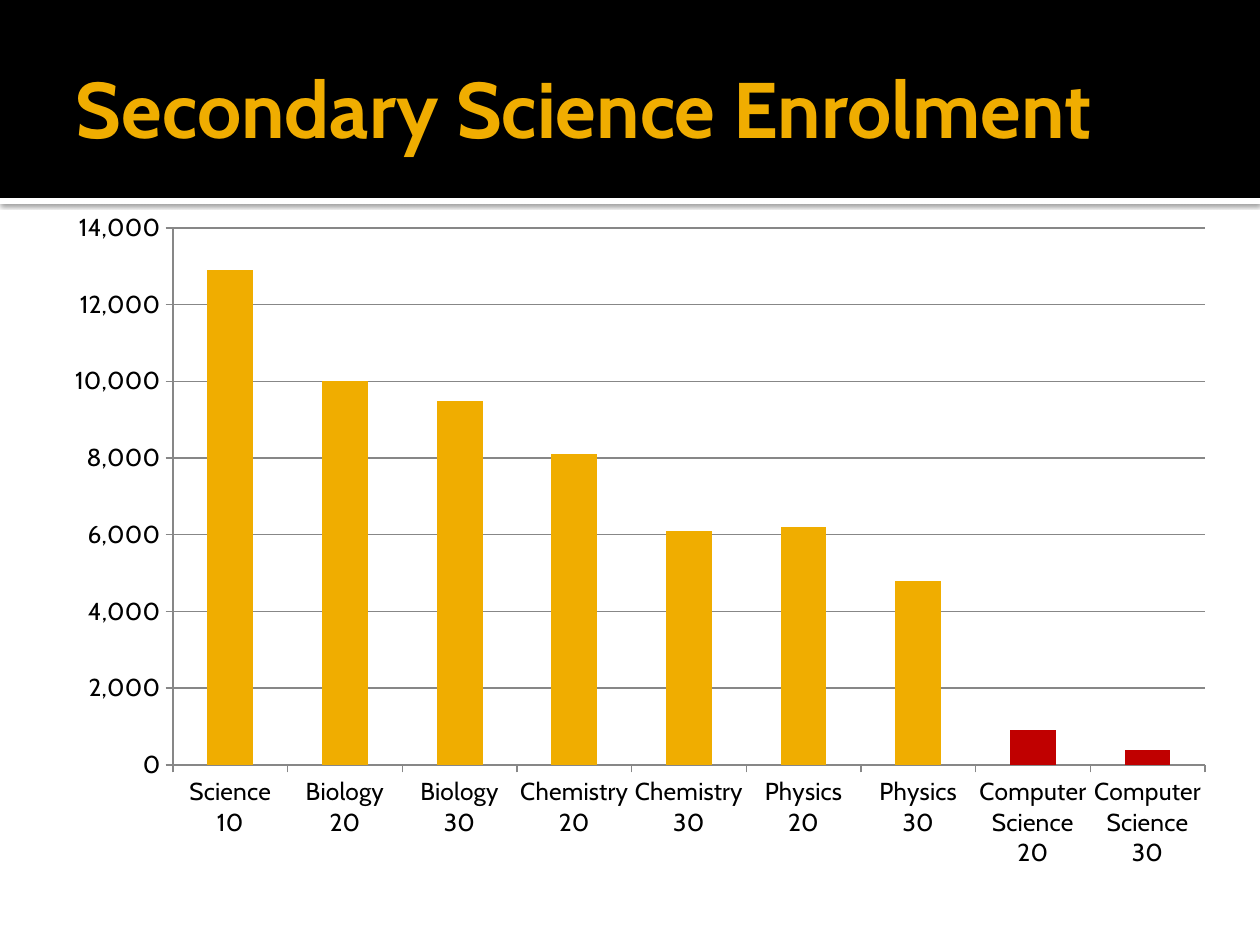
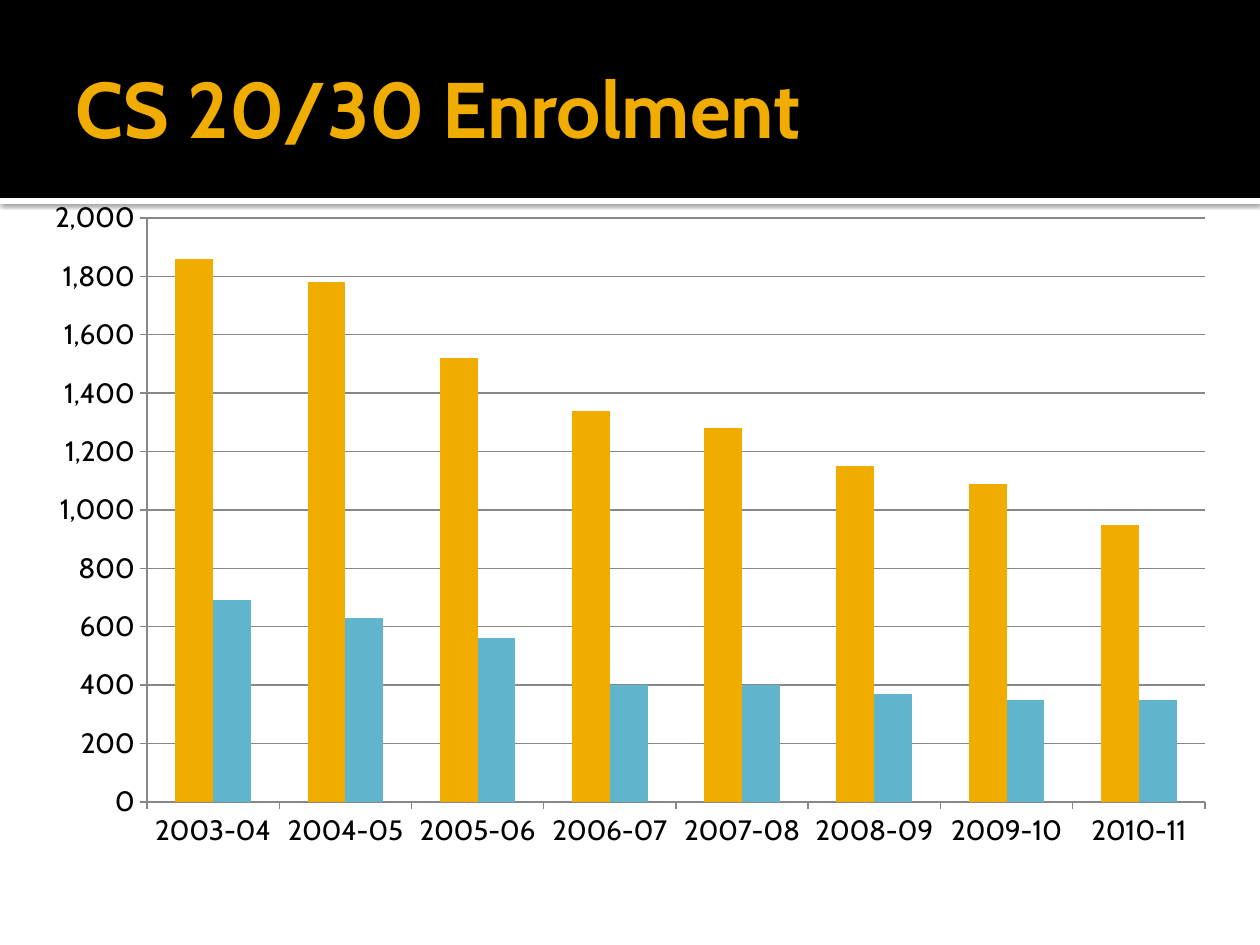
from lxml.etree import SubElement
from pptx import Presentation
from pptx.chart.data import CategoryChartData
from pptx.dml.color import RGBColor
from pptx.enum.chart import XL_CHART_TYPE, XL_TICK_MARK
from pptx.enum.shapes import MSO_SHAPE
from pptx.enum.text import MSO_ANCHOR, PP_ALIGN
from pptx.oxml import parse_xml
from pptx.oxml.ns import nsdecls, qn
from pptx.util import Emu, Pt

PX_PER_INCH = 126
SLIDE_WIDTH, SLIDE_HEIGHT = 1260, 945
BAND_HEIGHT, STRIP_HEIGHT = 198, 6
FONT = "Cabin"
COLORS = {
    "black": "000000",
    "white": "FFFFFF",
    "gold": "F0AD00",
    "blue": "60B5CC",
    "red": "C00000",
    "grid": "878787",
}


def px(length):
    return Emu(round(length * 914400 / PX_PER_INCH))


def color(name):
    return RGBColor.from_string(COLORS[name])


class Deck:
    def __init__(self):
        self.presentation = Presentation()
        self.presentation.slide_width = px(SLIDE_WIDTH)
        self.presentation.slide_height = px(SLIDE_HEIGHT)
        self.slide = None

    def new_slide(self, heading):
        blank = self.presentation.slide_layouts[6]
        self.slide = self.presentation.slides.add_slide(blank)
        strip = self.bar(BAND_HEIGHT, STRIP_HEIGHT, "white")
        self.cast_shadow(strip)
        self.bar(0, BAND_HEIGHT, "black")
        self.title(heading)

    def bar(self, top, height, fill):
        bar = self.slide.shapes.add_shape(
            MSO_SHAPE.RECTANGLE, 0, px(top), px(SLIDE_WIDTH), px(height))
        bar.shadow.inherit = False
        bar.fill.solid()
        bar.fill.fore_color.rgb = color(fill)
        bar.line.fill.background()
        return bar

    def cast_shadow(self, shape):
        effects = shape._element.spPr.find(qn("a:effectLst"))
        effects.append(parse_xml(
            f'<a:outerShdw {nsdecls("a")} blurRad="{Pt(2.5)}" dist="{Pt(0.8)}" '
            f'dir="5400000" algn="tl" rotWithShape="0">'
            f'<a:srgbClr val="{COLORS["black"]}"><a:alpha val="60000"/></a:srgbClr>'
            '</a:outerShdw>'))

    def title(self, text):
        frame = self.slide.shapes.add_textbox(px(63), px(21), px(1134), px(173)).text_frame
        frame.word_wrap = True
        frame.vertical_anchor = MSO_ANCHOR.MIDDLE
        frame.margin_left = px(13)
        frame.margin_top = frame.margin_right = frame.margin_bottom = px(6)
        paragraph = frame.paragraphs[0]
        paragraph.text = text
        paragraph.alignment = PP_ALIGN.LEFT
        self.set_font(paragraph.font, 45, "gold", bold=True)

    def set_font(self, font, size, ink="black", bold=False):
        font.name = FONT
        font.size = Pt(size)
        font.bold = bold
        font.color.rgb = color(ink)

    def column_chart(self, box, plot, label_size, top_value, step,
                     categories, series, highlights=()):
        data = CategoryChartData(number_format="#,##0")
        data.categories = categories
        for number, (_, values) in enumerate(series, 1):
            data.add_series(f"Series {number}", values)
        chart = self.slide.shapes.add_chart(
            XL_CHART_TYPE.COLUMN_CLUSTERED, *map(px, box), data).chart
        chart.has_title = False
        chart.has_legend = False
        self.set_font(chart.font, 10)

        columns = chart.plots[0]
        columns.vary_by_categories = False
        columns.gap_width = 150
        columns.overlap = 0
        for column, (fill, _) in zip(columns.series, series):
            self.fill_column(column, fill)
        for index, fill in highlights:
            self.fill_column(columns.series[0].points[index], fill)

        for axis in (chart.category_axis, chart.value_axis):
            axis.major_tick_mark = XL_TICK_MARK.OUTSIDE
            axis.minor_tick_mark = XL_TICK_MARK.NONE
            self.set_font(axis.tick_labels.font, label_size)
            self.style_line(axis.format.line)
        value_axis = chart.value_axis
        value_axis.minimum_scale = 0
        value_axis.maximum_scale = top_value
        value_axis.major_unit = step
        value_axis.tick_labels.number_format = "#,##0"
        value_axis.tick_labels.number_format_is_linked = False
        value_axis.has_major_gridlines = True
        self.style_line(value_axis.major_gridlines.format.line)
        self.place_plot(chart, box, plot)

    def fill_column(self, column, fill):
        column.format.fill.solid()
        column.format.fill.fore_color.rgb = color(fill)

    def style_line(self, line):
        line.color.rgb = color("grid")
        line.width = Pt(0.75)

    def place_plot(self, chart, box, plot):
        plot_area = chart._chartSpace.chart.plotArea
        for automatic in plot_area.findall(qn("c:layout")):
            plot_area.remove(automatic)
        layout = parse_xml(f'<c:layout {nsdecls("c")}/>')
        plot_area.insert(0, layout)
        left, top, width, height = box
        plot_left, plot_top, plot_width, plot_height = plot
        settings = {
            "layoutTarget": "inner",
            "xMode": "edge",
            "yMode": "edge",
            "x": (plot_left - left) / width,
            "y": (plot_top - top) / height,
            "w": plot_width / width,
            "h": plot_height / height,
        }
        manual = SubElement(layout, qn("c:manualLayout"))
        for tag, value in settings.items():
            SubElement(manual, qn(f"c:{tag}")).set("val", str(value))


def main():
    deck = Deck()

    deck.new_slide("Secondary Science Enrolment")
    deck.column_chart(
        box=(53, 199, 1176, 683), plot=(173, 228, 1032, 537),
        label_size=14, top_value=14000, step=2000,
        categories=["Science 10", "Biology 20", "Biology 30",
                    "Chemistry 20", "Chemistry 30", "Physics 20", "Physics 30",
                    "Computer Science 20", "Computer Science 30"],
        series=[("gold", [12900, 10000, 9500, 8100, 6100, 6200, 4800, 900, 400])],
        highlights=[(7, "red"), (8, "red")])

    deck.new_slide("CS 20/30 Enrolment")
    deck.column_chart(
        box=(32, 189, 1197, 672), plot=(147, 218, 1058, 584),
        label_size=16, top_value=2000, step=200,
        categories=[f"{year}-{year % 100 + 1:02}" for year in range(2003, 2011)],
        series=[("gold", [1860, 1780, 1520, 1340, 1280, 1150, 1090, 950]),
                ("blue", [690, 630, 560, 400, 400, 370, 350, 350])])

    deck.presentation.save("out.pptx")


if __name__ == "__main__":
    main()
